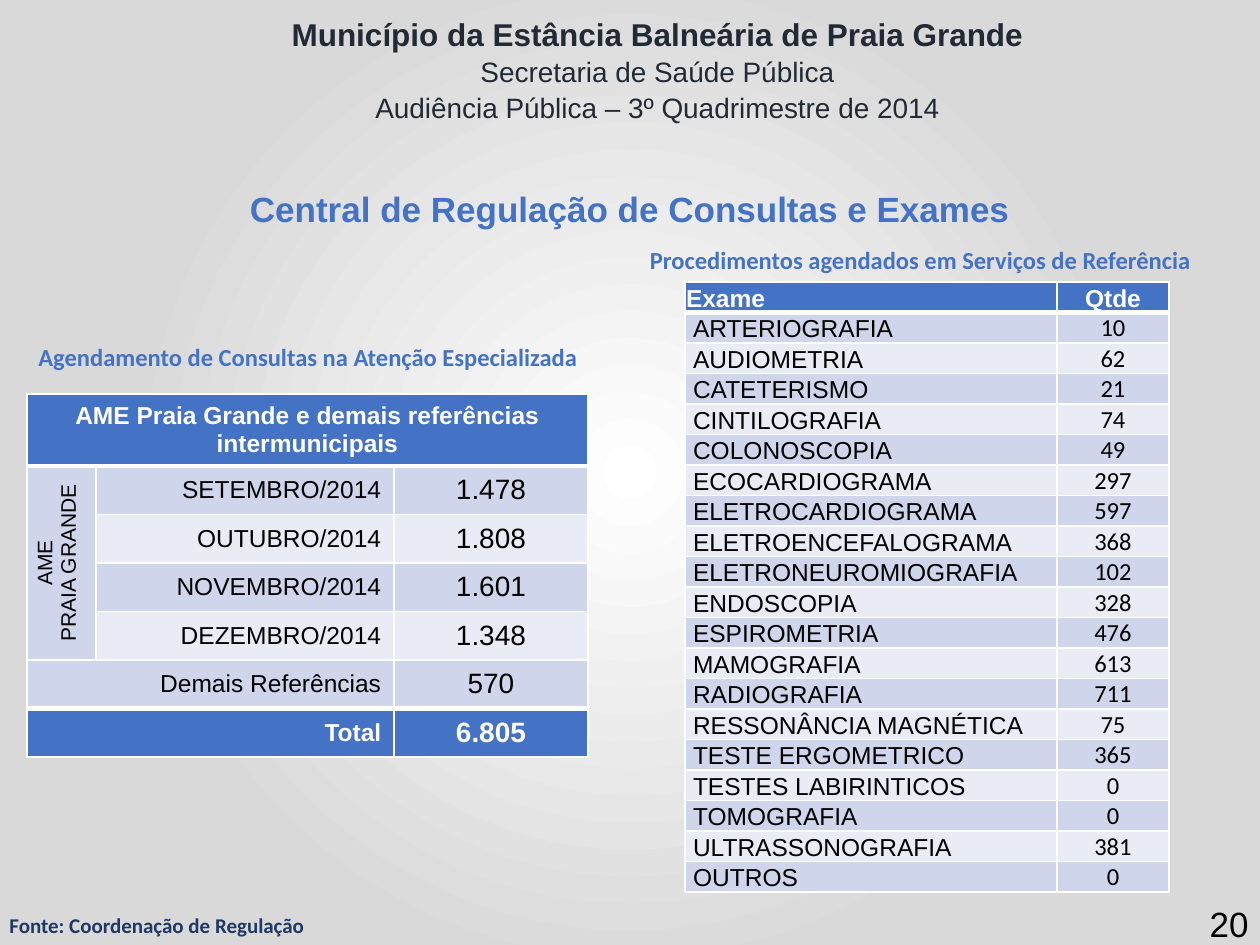
import pptx
import pptx.util
import pptx.oxml
import pptx.oxml.ns
import pptx.dml.color
import pptx.enum.text

SCALE = 914400 / 126
HUES = {
    "blue": "4472C4", "white": "FFFFFF", "black": "000000", "slate": "222A35",
    "navy": "203864", "dark": "CFD5EA", "light": "E9EBF5", "grey": "D9D9D9",
}
ALIGN = pptx.enum.text.PP_ALIGN
ANCHOR = pptx.enum.text.MSO_ANCHOR
VISITS = [
    ("AME\nPRAIA GRANDE", "SETEMBRO/2014", "1.478"),
    ("", "OUTUBRO/2014", "1.808"),
    ("", "NOVEMBRO/2014", "1.601"),
    ("", "DEZEMBRO/2014", "1.348"),
    ("Demais Referências", "", "570"),
    ("Total", "", "6.805"),
]
EXAMS = [
    ("ARTERIOGRAFIA", 10), ("AUDIOMETRIA", 62), ("CATETERISMO", 21),
    ("CINTILOGRAFIA", 74), ("COLONOSCOPIA", 49), ("ECOCARDIOGRAMA", 297),
    ("ELETROCARDIOGRAMA", 597), ("ELETROENCEFALOGRAMA", 368),
    ("ELETRONEUROMIOGRAFIA", 102), ("ENDOSCOPIA", 328), ("ESPIROMETRIA", 476),
    ("MAMOGRAFIA", 613), ("RADIOGRAFIA", 711), ("RESSONÂNCIA MAGNÉTICA", 75),
    ("TESTE ERGOMETRICO", 365), ("TESTES LABIRINTICOS", 0), ("TOMOGRAFIA", 0),
    ("ULTRASSONOGRAFIA", 381), ("OUTROS", 0),
]


def px(num):
    return round(num * SCALE)


def rgb(hue):
    return pptx.dml.color.RGBColor.from_string(HUES[hue])


def apply(item, form):
    for key, val in form.items():
        setattr(item, key, val)


def write(frame, text, size, hue, bold=False, face="Arial", side=ALIGN.CENTER):
    frame.text = text
    for para in frame.paragraphs:
        para.alignment = side
        apply(para.font, {"name": face, "size": pptx.util.Pt(size), "bold": bold})
        para.font.color.rgb = rgb(hue)


def label(slide, place, text, size, hue, wrap=True, anchor=ANCHOR.TOP, **form):
    frame = slide.shapes.add_textbox(*map(px, place)).text_frame
    apply(frame, {"word_wrap": wrap, "vertical_anchor": anchor})
    write(frame, text, size, hue, **form)
    return frame


def backdrop(slide):
    stops = "".join(
        f'<a:gs pos="{pos}000"><a:srgbClr val="{HUES[hue]}"/></a:gs>'
        for pos, hue in [(0, "white"), (65, "grey"), (97, "grey")])
    slide.element.cSld.insert(0, pptx.oxml.parse_xml(
        f'<p:bg {pptx.oxml.ns.nsdecls("p", "a")}><p:bgPr><a:gradFill rotWithShape="1">'
        f'<a:gsLst>{stops}</a:gsLst><a:path path="circle">'
        '<a:fillToRect l="50000" t="50000" r="50000" b="50000"/></a:path>'
        '</a:gradFill><a:effectLst/></p:bgPr></p:bg>'))


def border(cell, top, base):
    props = cell._tc.get_or_add_tcPr()
    for tag, wide in [("lnL", 1), ("lnR", 1), ("lnT", top), ("lnB", base)]:
        props.append(pptx.oxml.parse_xml(
            f'<a:{tag} {pptx.oxml.ns.nsdecls("a")} w="{wide * 12700}"><a:solidFill>'
            f'<a:srgbClr val="{HUES["white"]}"/></a:solidFill></a:{tag}>'))


def grid(slide, place, cols, rows, solid, thick):
    table = slide.shapes.add_table(len(rows), len(cols), *map(px, place)).table
    for col, wide in zip(table.columns, cols):
        col.width = px(wide)
    for num, (row, high) in enumerate(zip(table.rows, rows)):
        row.height = px(high)
        hue = "blue" if num in solid else "dark" if num % 2 else "light"
        for cell in row.cells:
            border(cell, 3 if num in thick else 1, 3 if num + 1 in thick else 1)
            cell.fill.solid()
            cell.fill.fore_color.rgb = rgb(hue)
            cell.vertical_anchor = ANCHOR.MIDDLE
    return table


def visits(slide):
    high = 291 / len(VISITS)
    last = len(VISITS)
    table = grid(slide, (27, 394, 561, 363), (69, 298, 194),
                 [72] + [high] * last, (0, last), (1, last))
    spans = [((0, 0), (0, 2)), ((1, 0), (4, 0)), ((5, 0), (5, 1)), ((6, 0), (6, 1))]
    for start, end in spans:
        table.cell(*start).merge(table.cell(*end))
    write(table.cell(0, 0).text_frame,
          "AME Praia Grande e demais referências intermunicipais", 14, "white", True)
    for num, (group, month, count) in enumerate(VISITS, 1):
        total = num == last
        hue = "white" if total else "black"
        if num == 1:
            write(table.cell(1, 0).text_frame, group, 12, hue)
            table.cell(1, 0)._tc.get_or_add_tcPr().set("vert", "vert270")
        elif group:
            write(table.cell(num, 0).text_frame, group, 14, hue, total, side=ALIGN.RIGHT)
        if month:
            write(table.cell(num, 1).text_frame, month, 14, hue, side=ALIGN.RIGHT)
        write(table.cell(num, 2).text_frame, count, 16, hue, total)


def exams(slide):
    lines = [("Exame", "Qtde")] + EXAMS
    table = grid(slide, (685, 282, 484, 611), (372, 112),
                 [611 / len(lines)] * len(lines), (0,), (1,))
    for num, pair in enumerate(lines):
        head = num == 0
        for col, word in enumerate(pair):
            cell = table.cell(num, col)
            indent = 1 if head or col else 8
            apply(cell, {"margin_left": px(indent), "margin_right": px(1),
                         "margin_top": px(1), "margin_bottom": 0,
                         "vertical_anchor": ANCHOR.BOTTOM})
            write(cell.text_frame, str(word), 14, "white" if head else "black", head,
                  "Calibri" if col and not head else "Arial",
                  ALIGN.CENTER if col else ALIGN.LEFT)


def main():
    deck = pptx.Presentation()
    apply(deck, {"slide_width": px(1260), "slide_height": px(945)})
    slide = deck.slides.add_slide(deck.slide_layouts[6])
    backdrop(slide)
    head = label(slide, (142, 9, 1031, 118),
                 "Município da Estância Balneária de Praia Grande\n"
                 "Secretaria de Saúde Pública\n"
                 "Audiência Pública – 3º Quadrimestre de 2014", 16, "slate")
    apply(head.paragraphs[0].font, {"size": pptx.util.Pt(18), "bold": True})
    for para in head.paragraphs[1:]:
        para.space_before = pptx.util.Pt(1)
    label(slide, (968, 898, 293, 50), "20", 20, "black",
          anchor=ANCHOR.MIDDLE, side=ALIGN.RIGHT)
    label(slide, (-3, 906, 324, 38), "Fonte: Coordenação de Regulação", 12, "navy",
          wrap=False, bold=True, face="Calibri", side=ALIGN.LEFT)
    label(slide, (0, 181, 1260, 55), "Central de Regulação de Consultas e Exames",
          20, "blue", bold=True)
    for place, text in [
        ((581, 239, 679, 43), "Procedimentos agendados em Serviços de Referência"),
        ((9, 336, 598, 43), "Agendamento de Consultas na Atenção Especializada"),
    ]:
        label(slide, place, text, 14, "blue", bold=True, face="Calibri")
    visits(slide)
    exams(slide)
    deck.save("out.pptx")


if __name__ == "__main__":
    main()
